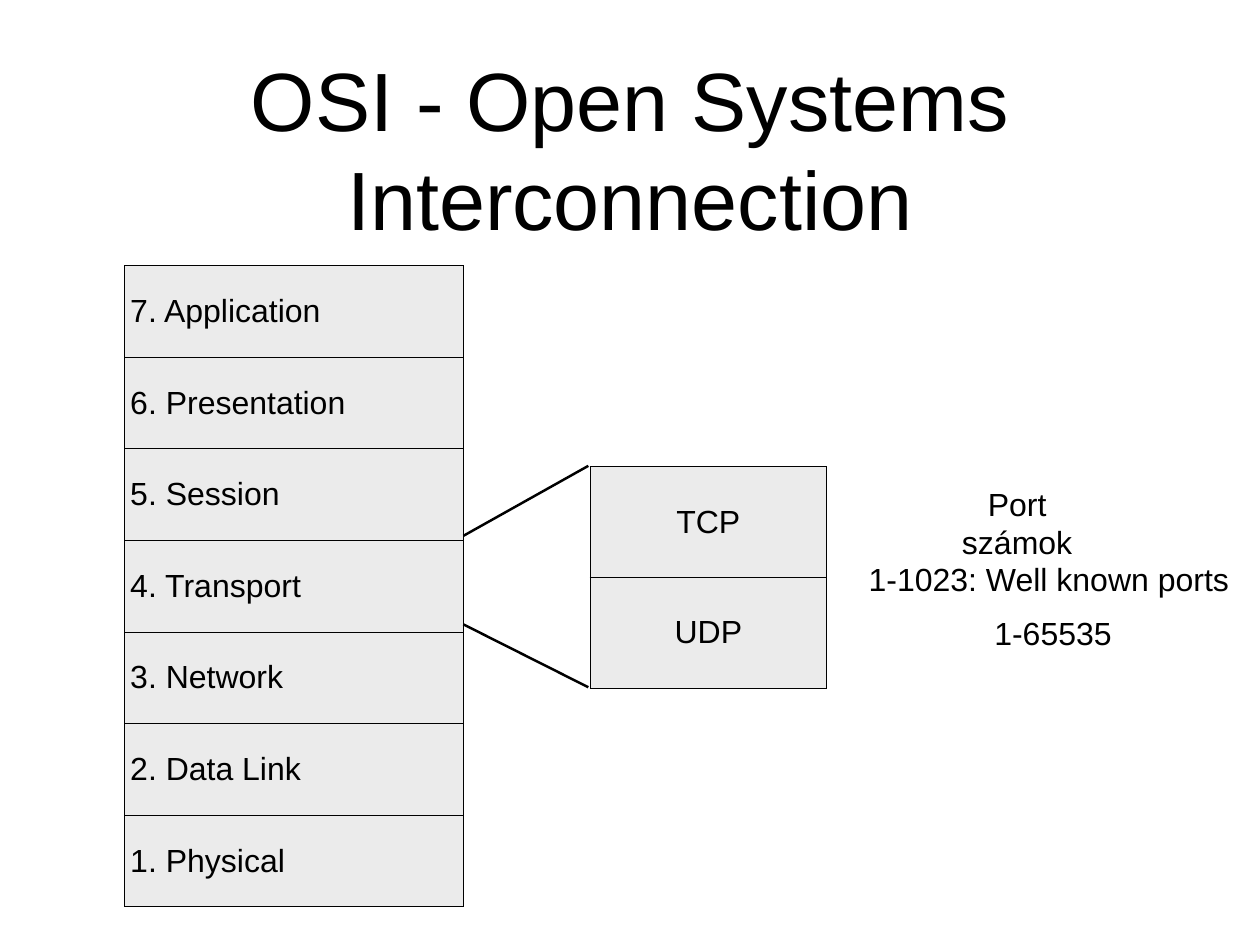
from lxml.etree import SubElement
from pptx import Presentation
from pptx.dml.color import RGBColor
from pptx.enum.shapes import MSO_CONNECTOR
from pptx.enum.text import MSO_ANCHOR, MSO_AUTO_SIZE, PP_ALIGN
from pptx.oxml.ns import qn
from pptx.util import Inches, Pt

BLACK = RGBColor(0x00, 0x00, 0x00)
LIGHT_GRAY = RGBColor(0xEB, 0xEB, 0xEB)
FONT = "Arial"
BODY_SIZE = 26
INSET = Inches(0.06)
MARGINS = {f"margin_{side}": INSET for side in ("left", "top", "right", "bottom")}

OSI_LAYERS = ["7. Application", "6. Presentation", "5. Session", "4. Transport",
              "3. Network", "2. Data Link", "1. Physical"]
TRANSPORT_PROTOCOLS = ["TCP", "UDP"]
ZOOM_LINES = [((5.23, 6.05), (6.64, 5.26)), ((5.23, 7.05), (6.64, 7.76))]
PORT_NOTES = [
    ("Port számok", (10.68, 5.63, 1.6, 0.54), True),
    ("1-65535", (11.16, 6.87, 1.45, 0.54), False),
    ("1-1023: Well known ports", (9.74, 6.27, 4.2, 0.54), False),
]


def apply_format(target, values):
    for name, value in values.items():
        setattr(target, name, value)


def write_text(frame, text, size, alignment):
    frame.text = text
    paragraph = frame.paragraphs[0]
    paragraph.alignment = alignment
    font = paragraph.runs[0].font
    apply_format(font, {"name": FONT, "size": Pt(size)})
    font.color.rgb = BLACK


def add_title(slide, text):
    title = slide.shapes.title
    apply_format(title, {"left": Inches(1.04), "top": Inches(0.49),
                         "width": Inches(12.14), "height": Inches(2.36)})
    frame = title.text_frame
    apply_format(frame, {**MARGINS, "word_wrap": True,
                         "auto_size": MSO_AUTO_SIZE.NONE,
                         "vertical_anchor": MSO_ANCHOR.MIDDLE})
    write_text(frame, text, 67.2, PP_ALIGN.CENTER)


def add_cell_borders(cell):
    properties = cell._tc.get_or_add_tcPr()
    for position, side in enumerate(("a:lnL", "a:lnR", "a:lnT", "a:lnB")):
        border = SubElement(properties, qn(side), w=str(Pt(1)))
        fill = SubElement(border, qn("a:solidFill"))
        SubElement(fill, qn("a:srgbClr"), val=str(BLACK))
        properties.insert(position, border)


def add_stack(slide, labels, left, top, width, row_height, alignment):
    table = slide.shapes.add_table(
        len(labels), 1, Inches(left), Inches(top),
        Inches(width), Inches(row_height * len(labels))).table
    apply_format(table, {"first_row": False, "horz_banding": False})
    table.columns[0].width = Inches(width)
    for row, label in zip(table.rows, labels):
        row.height = Inches(row_height)
        cell = row.cells[0]
        apply_format(cell, {**MARGINS, "vertical_anchor": MSO_ANCHOR.MIDDLE})
        cell.fill.solid()
        cell.fill.fore_color.rgb = LIGHT_GRAY
        write_text(cell.text_frame, label, BODY_SIZE, alignment)
        add_cell_borders(cell)


def add_zoom_line(slide, start, end):
    connector = slide.shapes.add_connector(
        MSO_CONNECTOR.STRAIGHT, *map(Inches, start + end))
    connector.line.width = Pt(2)
    connector.line.color.rgb = BLACK
    SubElement(connector._element.spPr, qn("a:effectLst"))


def add_port_note(group, text, bounds, wraps):
    frame = group.shapes.add_textbox(*map(Inches, bounds)).text_frame
    apply_format(frame, {**MARGINS, "word_wrap": wraps,
                         "vertical_anchor": MSO_ANCHOR.MIDDLE})
    write_text(frame, text, BODY_SIZE, PP_ALIGN.CENTER)


def main():
    presentation = Presentation()
    apply_format(presentation, {"slide_width": Inches(14.22),
                                "slide_height": Inches(10.67)})
    slide = presentation.slides.add_slide(presentation.slide_layouts[5])
    add_title(slide, "OSI - Open Systems Interconnection")
    add_stack(slide, OSI_LAYERS, 1.41, 3, 3.82, 7.24 / len(OSI_LAYERS), PP_ALIGN.LEFT)
    add_stack(slide, TRANSPORT_PROTOCOLS, 6.66, 5.27, 2.67, 1.25, PP_ALIGN.CENTER)
    for start, end in ZOOM_LINES:
        add_zoom_line(slide, start, end)
    port_notes = slide.shapes.add_group_shape()
    for text, bounds, wraps in PORT_NOTES:
        add_port_note(port_notes, text, bounds, wraps)
    presentation.save("out.pptx")


if __name__ == "__main__":
    main()
